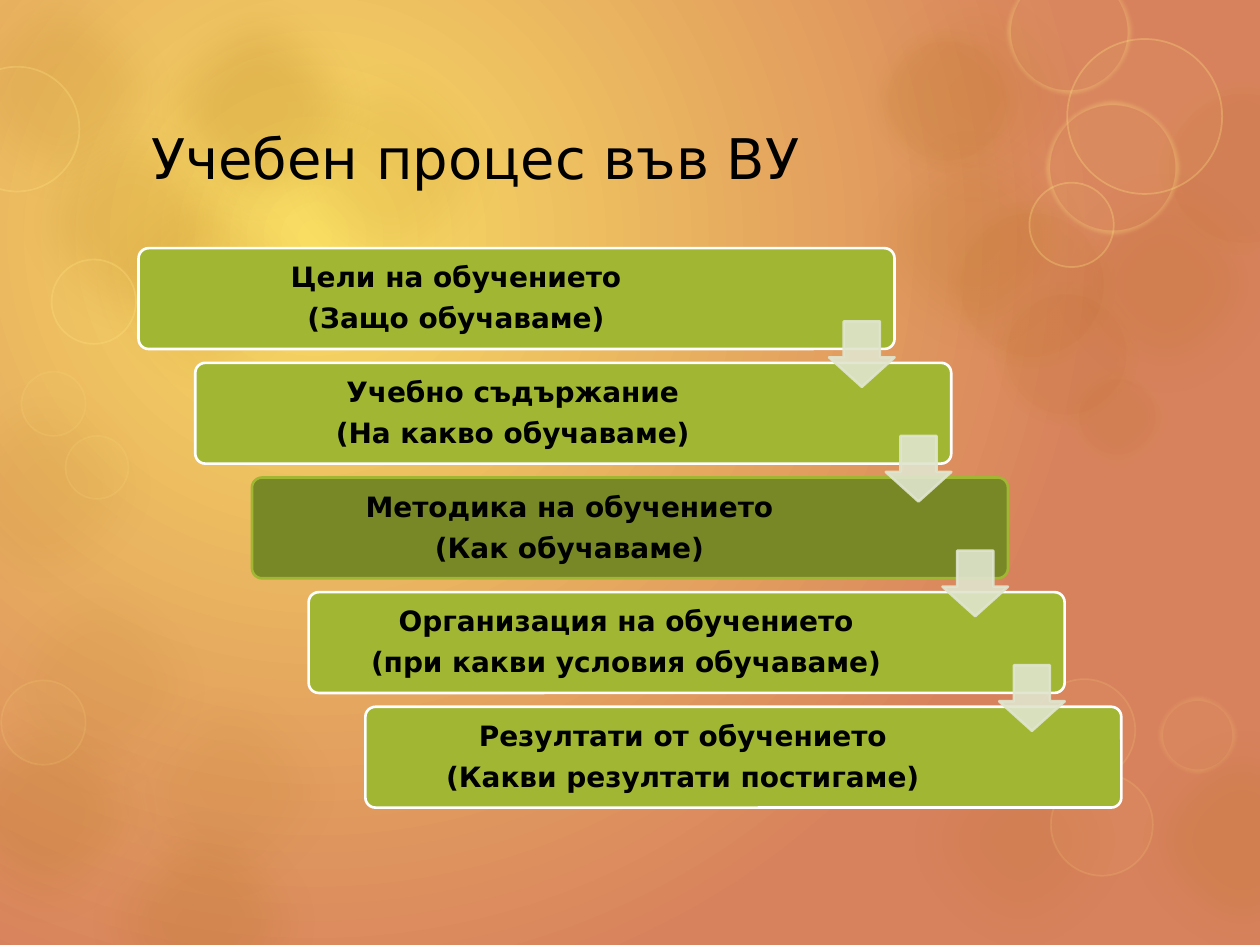
from dataclasses import dataclass
from typing import NamedTuple

from lxml.etree import SubElement
from pptx import Presentation
from pptx.dml.color import RGBColor as Rgb
from pptx.enum.shapes import MSO_SHAPE as Shape
from pptx.enum.text import MSO_ANCHOR as Anchor, PP_ALIGN as Align
from pptx.oxml.ns import qn
from pptx.util import Inches, Pt


@dataclass(frozen=True)
class Theme:
    font: str = "DejaVu Sans"
    title_size: int = 32
    step_size: int = 16
    ink: str = "000000"
    glow: str = "F8DD62"
    ember: str = "D8825D"
    amber: str = "AE6D11"
    sand: str = "F1BD74"
    lemon: str = "FFE281"
    green: str = "A1B633"
    olive: str = "798826"
    white: str = "FFFFFF"
    mist: str = "E0E5CE"


class Paint(NamedTuple):
    fill: str
    opacity: int = 100
    line: str | None = None
    line_width: float = 0
    line_opacity: int = 100
    soft_edge: float = 0


class Bubble(NamedTuple):
    left: float
    top: float
    size: float
    paint: Paint


class Step(NamedTuple):
    name: str
    question: str
    fill: str
    line: str


THEME = Theme()
BLOB_SIZE = 2.09
STEP_RIGHT, STEP_DOWN = 0.45, 0.91


def blob(opacity: int) -> Paint:
    return Paint(THEME.amber, opacity, soft_edge=0.35)


def ring(line_opacity: int, soft: bool = False) -> Paint:
    width, edge = (5, 0.04) if soft else (1, 0)
    return Paint(THEME.lemon, 5, THEME.lemon, width, line_opacity, edge)


HAZE = Paint(THEME.amber, 10, THEME.sand, 14, 6, 0.12)
BRIGHT, DIM = ring(30), ring(15)
SOFT_BRIGHT, SOFT_DIM = ring(30, True), ring(15, True)

BLOBS = [Bubble(left, top, BLOB_SIZE, blob(opacity)) for left, top, opacity in [
    (-0.26, 4.42, 8), (0.57, 1.2, 10), (2.05, 0.31, 10), (0.57, 6.27, 16),
    (-0.56, -0.32, 14), (1.01, -0.18, 20), (0, 0.72, 15), (6.69, -0.29, 10),
    (8.2, 1.2, 15), (8.81, 5.62, 16), (-0.68, 5.41, 16), (0.77, 5.24, 8),
    (6.69, 0.86, 15), (7.06, 5.62, 10), (-0.69, 2.82, 8),
]]
BUBBLES = BLOBS + [
    Bubble(9.18, 0.65, 1.37, HAZE),
    Bubble(6.94, 0.23, 1.14, HAZE),
    Bubble(7.52, 1.59, 1.33, HAZE),
    Bubble(7.89, 2.24, 1.14, HAZE),
    Bubble(8.47, 2.91, 0.79, HAZE),
    Bubble(0.01, 5.4, 0.67, DIM),
    Bubble(-0.36, 0.53, 0.99, BRIGHT),
    Bubble(0.41, 2.06, 0.67, BRIGHT),
    Bubble(7.99, -0.24, 0.99, SOFT_BRIGHT),
    Bubble(8.47, 0.31, 1.23, BRIGHT),
    Bubble(8.3, 0.8, 1.06, SOFT_BRIGHT),
    Bubble(8.17, 1.45, 0.67, BRIGHT),
    Bubble(8.34, 6.14, 0.81, DIM),
    Bubble(8.2, 5.39, 0.81, DIM),
    Bubble(9.2, 5.53, 0.61, SOFT_DIM),
    Bubble(0.17, 2.95, 0.51, DIM),
    Bubble(0.52, 3.46, 0.5, DIM),
]
STEPS = [
    Step("Цели на обучението", "(Защо обучаваме)", THEME.green, THEME.white),
    Step("Учебно съдържание", "(На какво обучаваме)", THEME.green, THEME.white),
    Step("Методика на обучението", "(Как обучаваме)", THEME.olive, THEME.green),
    Step("Организация на обучението", "(при какви условия обучаваме)", THEME.green, THEME.white),
    Step("Резултати от обучението", "(Какви резултати постигаме)", THEME.green, THEME.white),
]


def apply(target, values: dict) -> None:
    for name, value in values.items():
        setattr(target, name, value)


def paint_shape(shape, paint: Paint) -> None:
    shape.shadow.inherit = False
    shape.fill.solid()
    shape.fill.fore_color.rgb = Rgb.from_string(paint.fill)
    if paint.line:
        shape.line.color.rgb = Rgb.from_string(paint.line)
        shape.line.width = Pt(paint.line_width)
    else:
        shape.line.fill.background()
    properties = shape.element.spPr
    fill_color = f"{qn('a:solidFill')}/{qn('a:srgbClr')}"
    for place, opacity in ((fill_color, paint.opacity),
                           (f"{qn('a:ln')}/{fill_color}", paint.line_opacity)):
        if opacity < 100:
            SubElement(properties.find(place), qn("a:alpha"), val=str(opacity * 1000))
    if paint.soft_edge:
        SubElement(properties.find(qn("a:effectLst")), qn("a:softEdge"),
                   rad=str(Inches(paint.soft_edge)))


def draw_bubble(shapes, bubble: Bubble) -> None:
    box = (bubble.left, bubble.top, bubble.size, bubble.size)
    paint_shape(shapes.add_shape(Shape.OVAL, *map(Inches, box)), bubble.paint)


def write(shapes, box: tuple, lines: list[str], size: int, frame: dict, paragraph: dict,
          bold: bool = False) -> None:
    text = shapes.add_textbox(*map(Inches, box)).text_frame
    apply(text, {"word_wrap": True, "vertical_anchor": Anchor.MIDDLE, **frame})
    text.text = "\n".join(lines)
    for line in text.paragraphs:
        apply(line, paragraph)
        apply(line.font, {"name": THEME.font, "size": Pt(size), "bold": bold})
        line.font.color.rgb = Rgb.from_string(THEME.ink)


def draw_step(shapes, index: int, step: Step) -> None:
    left, top = 1.1 + index * STEP_RIGHT, 1.97 + index * STEP_DOWN
    bar = shapes.add_shape(Shape.ROUNDED_RECTANGLE, *map(Inches, (left, top, 6, 0.8)))
    bar.adjustments[0] = 0.1
    paint_shape(bar, Paint(step.fill, line=step.line, line_width=1.5))
    margins = {f"margin_{side}": Inches(0.07) for side in ("left", "top", "right", "bottom")}
    write(shapes, (left + 0.02, top + 0.03, 5, 0.75), [step.name, step.question],
          THEME.step_size, margins,
          {"alignment": Align.CENTER, "line_spacing": 0.9, "space_after": Pt(6)}, bold=True)


def draw_arrow(shapes, index: int) -> None:
    box = (6.58 + index * STEP_RIGHT, 2.55 + index * STEP_DOWN, 0.52, 0.52)
    arrow = shapes.add_shape(Shape.DOWN_ARROW, *map(Inches, box))
    arrow.adjustments[0], arrow.adjustments[1] = 0.55, 0.45
    paint_shape(arrow, Paint(THEME.mist, 90, THEME.mist, 1.5, 90))


def paint_background(slide) -> None:
    fill = slide.background.fill
    fill.gradient()
    for stop, color in zip(fill.gradient_stops, (THEME.glow, THEME.ember)):
        stop.color.rgb = Rgb.from_string(color)
    gradient = slide.element.find(f".//{qn('a:gradFill')}")
    gradient.remove(gradient.find(qn("a:lin")))
    circle = SubElement(gradient, qn("a:path"), {"path": "circle"})
    SubElement(circle, qn("a:fillToRect"), l="50000", t="50000", r="100000", b="100000")


def main() -> None:
    deck = Presentation()
    apply(deck, {"slide_width": Inches(10), "slide_height": Inches(7.5)})
    slide = deck.slides.add_slide(deck.slide_layouts[6])
    paint_background(slide)
    for bubble in BUBBLES:
        draw_bubble(slide.shapes, bubble)
    write(slide.shapes, (1.1, 0.74, 7.79, 1.01), ["Учебен процес във ВУ"],
          THEME.title_size, {}, {"alignment": Align.LEFT})
    process = slide.shapes.add_group_shape().shapes
    for index, step in enumerate(STEPS):
        draw_step(process, index, step)
    for index in range(len(STEPS) - 1):
        draw_arrow(process, index)
    deck.save("out.pptx")


if __name__ == "__main__":
    main()
